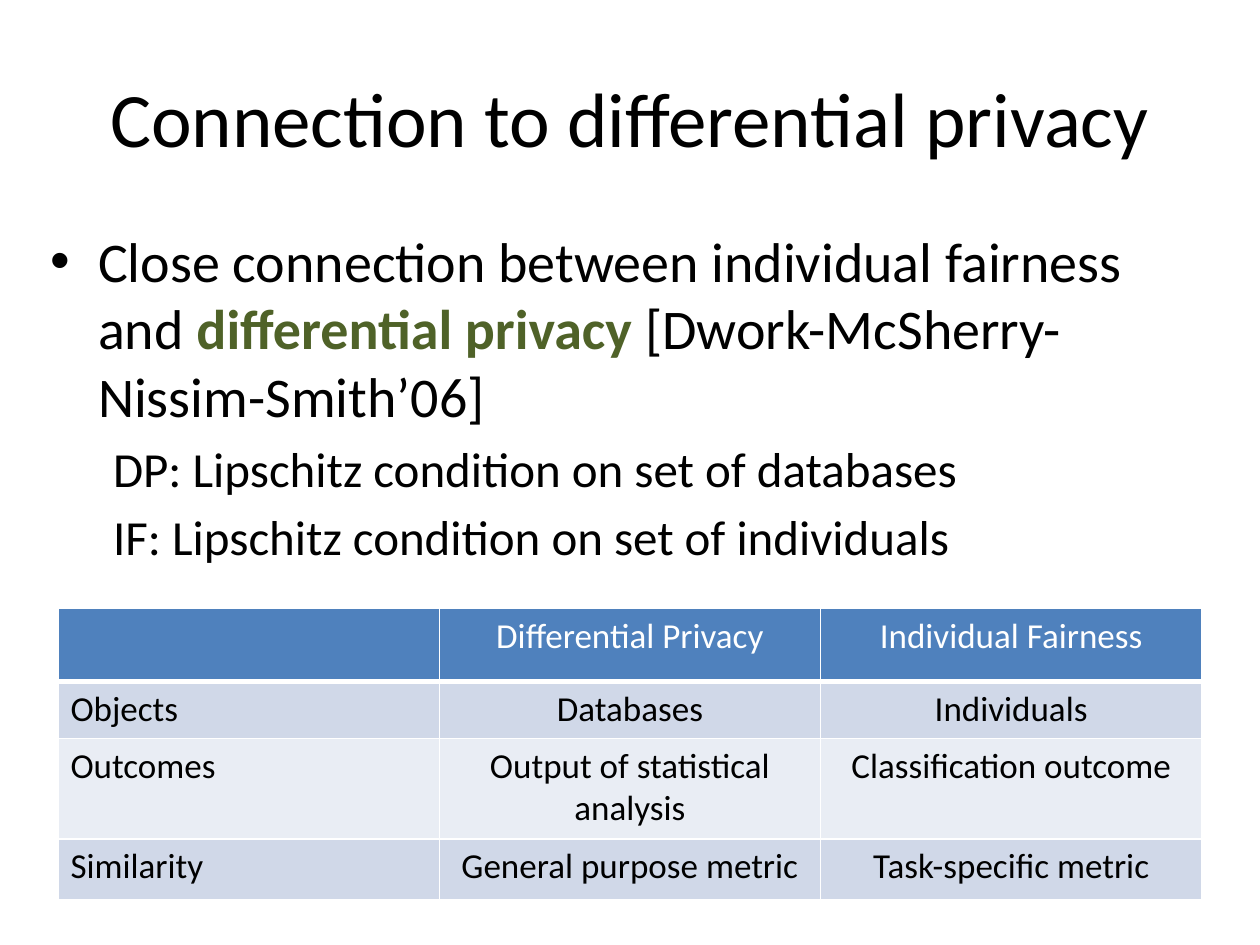
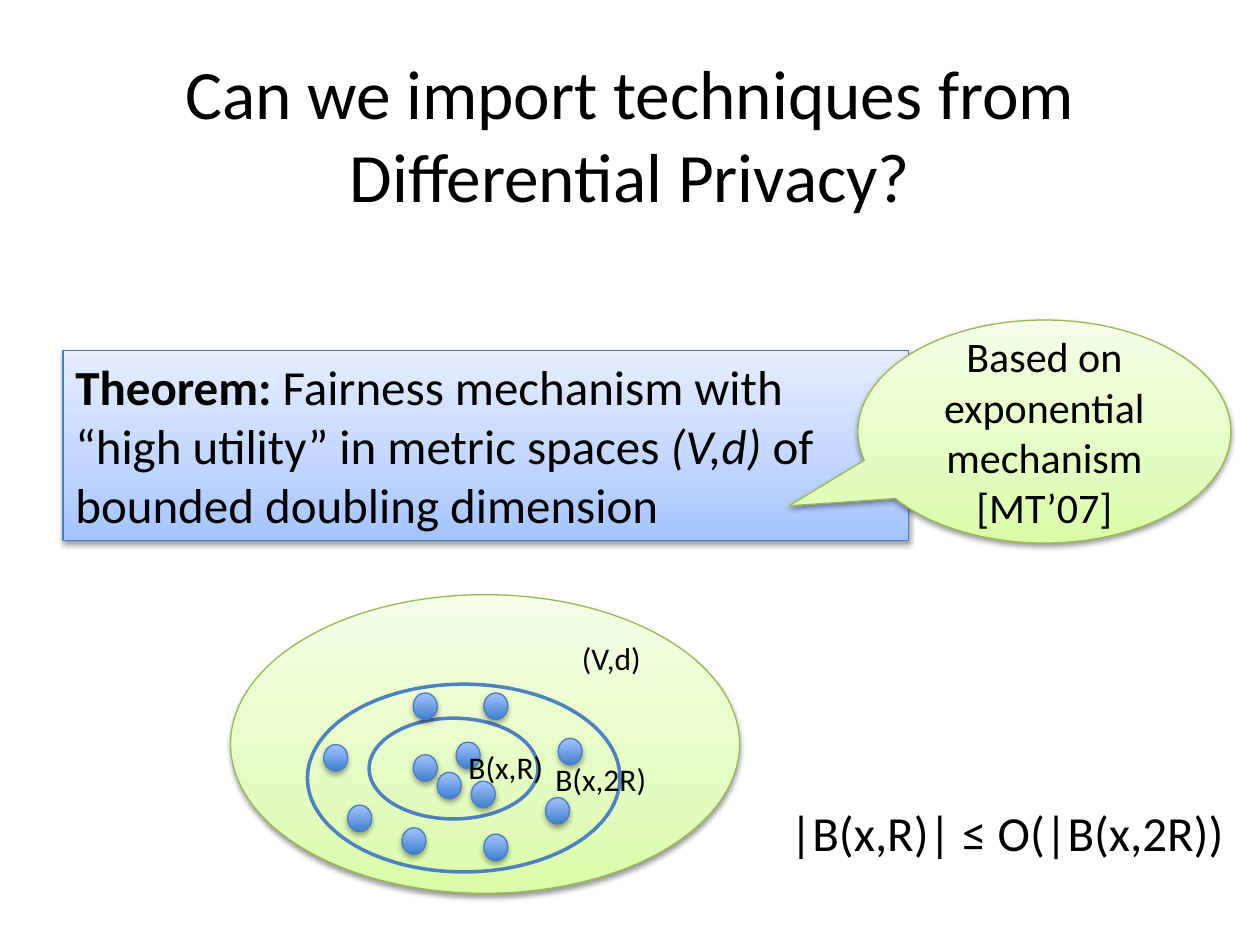
from dataclasses import dataclass

from lxml import etree
from pptx import Presentation
from pptx.dml.color import RGBColor
from pptx.enum.shapes import MSO_SHAPE
from pptx.enum.text import MSO_ANCHOR, MSO_AUTO_SIZE, PP_ALIGN
from pptx.oxml.ns import qn
from pptx.util import Inches, Pt

LEFT, CENTER = PP_ALIGN.LEFT, PP_ALIGN.CENTER
TOP, MIDDLE = MSO_ANCHOR.TOP, MSO_ANCHOR.MIDDLE
NO_FIT = MSO_AUTO_SIZE.NONE
RECTANGLE, ELLIPSE = MSO_SHAPE.RECTANGLE, MSO_SHAPE.OVAL
CALLOUT = MSO_SHAPE.OVAL_CALLOUT
TITLE_ONLY = 5
COLUMNS, ROWS = 100, 75


@dataclass(frozen=True)
class Look:
    stops: tuple
    line: str
    shadow_alpha: int
    shadow_distance: float


@dataclass(frozen=True)
class Theme:
    font: str = "Calibri"
    ink: str = "000000"
    paper: str = "FFFFFF"
    accent: str = "4F81BD"
    emphasis: str = "4F6228"
    bands: tuple = ("D0D8E8", "E9EDF4")
    title: float = 44
    long_title: float = 39.6
    lead: float = 32
    body: float = 28
    callout: float = 24
    table: float = 20
    label: float = 18
    hairline: float = 0.75
    ring: float = 2
    shadow_blur: float = 3.1
    blue: Look = Look(((0, "A4C4FF"), (35, "BFD4FF"), (100, "E6EEFF")), "4B7EBC", 38, 1.6)
    green: Look = Look(((0, "DAFDA7"), (35, "E4FCC2"), (100, "F5FFE7")), "98B955", 38, 1.6)
    point: Look = Look(((0, "3F80CE"), (100, "A4C4FF")), "4B7EBC", 35, 1.8)


THEME = Theme()


def add_child(parent, tag, **attributes):
    return etree.SubElement(parent, qn(tag), {key: str(value) for key, value in attributes.items()})


def write(para, text, size, color=THEME.ink, bold=False, italic=False, align=LEFT):
    para.alignment = align
    span = para.add_run()
    span.text = text
    font = span.font
    font.name, font.size, font.bold, font.italic = THEME.font, Pt(size), bold, italic
    font.color.rgb = RGBColor.from_string(color)


class Slides:
    def __init__(self, theme):
        self.theme = theme
        self.deck = Presentation()
        self.deck.slide_width, self.deck.slide_height = Inches(10), Inches(7.5)
        self.page = None

    def grid(self, left, top, width, height):
        column = self.deck.slide_width / COLUMNS
        row = self.deck.slide_height / ROWS
        return [round(value) for value in (left * column, top * row, width * column, height * row)]

    def title_page(self, title, area, size):
        self.page = self.deck.slides.add_slide(self.deck.slide_layouts[TITLE_ONLY])
        box = self.page.shapes.title
        box.left, box.top, box.width, box.height = self.grid(*area)
        frame = box.text_frame
        frame.auto_size, frame.word_wrap, frame.vertical_anchor = NO_FIT, True, MIDDLE
        write(frame.paragraphs[0], title, size, align=CENTER)

    def group(self):
        return self.page.shapes.add_group_shape().shapes

    def text(self, area, text, size, parent=None):
        box = (parent or self.page.shapes).add_textbox(*self.grid(*area))
        box.text_frame.word_wrap = False
        write(box.text_frame.paragraphs[0], text, size)

    def outline(self, area, items):
        frame = self.page.shapes.add_textbox(*self.grid(*area)).text_frame
        frame.word_wrap = True
        for index, (spans, size, margin, bullet) in enumerate(items):
            para = frame.add_paragraph() if index else frame.paragraphs[0]
            for text, style in spans:
                write(para, text, size, **style)
            para.space_before = Pt(0.2 * size if index else 0)
            properties = para._p.get_or_add_pPr()
            properties.set("marL", str(Inches(margin)))
            properties.set("indent", str(-Inches(margin) if bullet else 0))
            if bullet:
                add_child(properties, "a:buFont", typeface="Arial")
                add_child(properties, "a:buChar", char=bullet)
            else:
                add_child(properties, "a:buNone")

    def gradient_shape(self, kind, area, look, spans=(), size=0, align=LEFT, anchor=TOP, parent=None):
        box = (parent or self.page.shapes).add_shape(kind, *self.grid(*area))
        box.fill.gradient()
        box.fill.gradient_angle = 90
        stops = box.element.spPr.find(qn("a:gradFill")).find(qn("a:gsLst"))
        for stop in list(stops):
            stops.remove(stop)
        for position, color in look.stops:
            add_child(add_child(stops, "a:gs", pos=position * 1000), "a:srgbClr", val=color)
        box.line.color.rgb = RGBColor.from_string(look.line)
        box.line.width = Pt(self.theme.hairline)
        self.drop_shadow(box, look)
        frame = box.text_frame
        frame.word_wrap, frame.vertical_anchor = True, anchor
        for text, style in spans:
            write(frame.paragraphs[0], text, size, align=align, **style)
        return box

    def drop_shadow(self, box, look):
        box.shadow.inherit = False
        effects = box.element.spPr.find(qn("a:effectLst"))
        shadow = add_child(effects, "a:outerShdw", blurRad=Pt(self.theme.shadow_blur),
                           dist=Pt(look.shadow_distance), dir=90 * 60000, rotWithShape=0)
        color = add_child(shadow, "a:srgbClr", val=self.theme.ink)
        add_child(color, "a:alpha", val=look.shadow_alpha * 1000)

    def ring(self, area, parent):
        ring = parent.add_shape(ELLIPSE, *self.grid(*area))
        ring.fill.background()
        ring.line.color.rgb = RGBColor.from_string(self.theme.accent)
        ring.line.width = Pt(self.theme.ring)
        ring.shadow.inherit = False

    def ball(self, ring, points, label, label_area):
        parent = self.group()
        self.ring(ring, parent)
        for left, top in points:
            self.gradient_shape(ELLIPSE, (left, top, 1.9, 2.1), self.theme.point, parent=parent)
        self.text(label_area, label, self.theme.label, parent)

    def table(self, area, heights, rows):
        table = self.page.shapes.add_table(len(rows), len(rows[0]), *self.grid(*area)).table
        table.first_row = table.horz_banding = False
        for index, (height, texts) in enumerate(zip(heights, rows)):
            table.rows[index].height = self.grid(0, 0, 0, height)[3]
            header = index == 0
            fill = self.theme.accent if header else self.theme.bands[(index - 1) % 2]
            for column, text in enumerate(texts):
                cell = table.cell(index, column)
                self.borders(cell, 3 if header else 1)
                cell.fill.solid()
                cell.fill.fore_color.rgb = RGBColor.from_string(fill)
                para = cell.text_frame.paragraphs[0]
                para.font.size = Pt(self.theme.table)
                if text:
                    write(para, text, self.theme.table, align=CENTER if column else LEFT,
                          color=self.theme.paper if header else self.theme.ink)

    def borders(self, cell, bottom):
        properties = cell._tc.get_or_add_tcPr()
        for side, width in (("L", 1), ("R", 1), ("T", 1), ("B", bottom)):
            line = add_child(properties, f"a:ln{side}", w=Pt(width))
            add_child(add_child(line, "a:solidFill"), "a:srgbClr", val=self.theme.paper)


def connection_page(slides):
    slides.title_page("Connection to differential privacy", (5, 3, 90, 12.5), THEME.title)
    slides.outline((3, 17.5, 94.6, 36.1), [
        ([("Close connection between individual fairness and ", {}),
          ("differential privacy", {"bold": True, "color": THEME.emphasis}),
          (" [Dwork-McSherry-Nissim-Smith’06]", {})], THEME.lead, 0.38, "•"),
        ([("DP: Lipschitz condition on set of databases", {})], THEME.body, 0.5, None),
        ([("IF: Lipschitz condition on set of individuals", {})], THEME.body, 0.5, None),
    ])
    slides.table((4.6, 48.3, 90.8, 23.1), (5.8, 4.5, 8, 4.8), [
        ("", "Differential Privacy", "Individual Fairness"),
        ("Objects", "Databases", "Individuals"),
        ("Outcomes", "Output of statistical analysis", "Classification outcome"),
        ("Similarity", "General purpose metric", "Task-specific metric"),
    ])


def techniques_page(slides):
    slides.title_page("Can we import techniques from Differential Privacy?",
                      (5, 4.3, 90, 12.5), THEME.long_title)
    slides.gradient_shape(RECTANGLE, (5, 27.8, 67.1, 15.1), THEME.blue, [
        ("Theorem:", {"bold": True}),
        (" Fairness mechanism with “high utility” in metric spaces ", {}),
        ("(V,d)", {"italic": True}),
        (" of bounded doubling dimension", {}),
    ], THEME.body)
    callout = slides.gradient_shape(
        CALLOUT, (68.1, 25.4, 29.6, 17.7), THEME.green,
        [("Based on exponential mechanism [MT’07]", {})], THEME.callout, CENTER, MIDDLE)
    callout.adjustments[0], callout.adjustments[1] = -0.685, 0.333
    slides.gradient_shape(ELLIPSE, (18.3, 47.2, 40.4, 23.7), THEME.green)
    slides.text((61.7, 63.2, 36.8, 5.7), "|B(x,R)| ≤ O(|B(x,2R))", THEME.body)
    inner_points = [(32.8, 59.9), (36.2, 58.9), (34.7, 61.3), (37.4, 62)]
    outer_points = [(38.4, 55), (44.3, 58.6), (43.3, 63.3), (38.4, 66.2),
                    (31.9, 65.7), (27.6, 63.9), (32.8, 55), (25.7, 59.1)]
    slides.ball((29.3, 57, 13.4, 8), inner_points, "B(x,R)", (36.2, 58.9, 8, 4))
    slides.ball((24.4, 54.3, 24.8, 14.9), outer_points, "B(x,2R)", (43.1, 59.8, 9.3, 4))
    slides.text((45.2, 50.2, 6.9, 4), "(V,d)", THEME.label)


def main():
    slides = Slides(THEME)
    connection_page(slides)
    techniques_page(slides)
    slides.deck.save("out.pptx")


if __name__ == "__main__":
    main()
